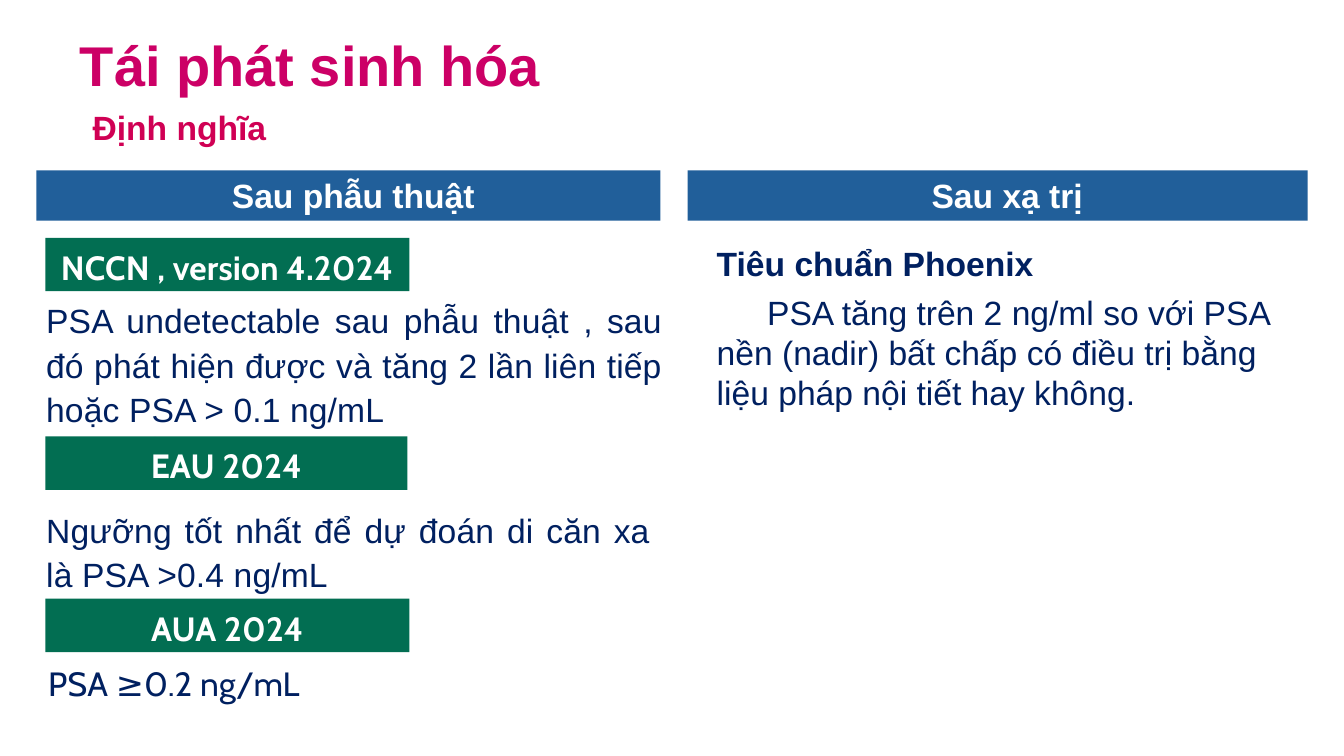
from dataclasses import dataclass

from pptx import Presentation
from pptx.dml.color import RGBColor
from pptx.enum.shapes import MSO_SHAPE
from pptx.enum.text import MSO_ANCHOR, MSO_AUTO_SIZE, PP_ALIGN
from pptx.util import Emu, Pt

RECTANGLE = MSO_SHAPE.RECTANGLE
TOP = MSO_ANCHOR.TOP
GROW = MSO_AUTO_SIZE.SHAPE_TO_FIT_TEXT
LEFT, CENTER, JUSTIFY = PP_ALIGN.LEFT, PP_ALIGN.CENTER, PP_ALIGN.JUSTIFY
EMU_PER_PX = 9144
TITLE_ONLY = 5


@dataclass(frozen=True)
class Theme:
    title: str = "CC0066"
    subtitle: str = "D00054"
    header: str = "215F9A"
    label: str = "026E52"
    body: str = "002060"
    white: str = "FFFFFF"
    title_size: int = 40
    text_size: int = 24
    font: str = "Arial"
    label_font: str = "Cabin"


def px(length):
    return Emu(length * EMU_PER_PX)


def write(paragraph, text, *, color, font, size, bold=False, align=LEFT,
          indent=0, line_spacing=1.0, space_before=0, tracking=0):
    paragraph.alignment = align
    paragraph.line_spacing = line_spacing
    paragraph.space_before = Pt(space_before)
    if indent:
        properties = paragraph._p.get_or_add_pPr()
        properties.set("marL", str(px(indent)))
        properties.set("indent", "0")
    run = paragraph.add_run()
    run.text = text
    run.font.name = font
    run.font.size = Pt(size)
    run.font.bold = bold
    run.font.color.rgb = RGBColor.from_string(color)
    if tracking:
        run._r.get_or_add_rPr().set("spc", str(tracking))


class SlideBuilder:
    def __init__(self, slide, theme):
        self.slide = slide
        self.theme = theme

    def frame(self, shape, margins=(10, 5)):
        frame = shape.text_frame
        frame.word_wrap = True
        frame.auto_size = GROW
        frame.vertical_anchor = TOP
        frame.margin_left = frame.margin_right = px(margins[0])
        frame.margin_top = frame.margin_bottom = px(margins[1])
        return frame

    def title(self, text, box):
        shape = self.slide.shapes.title
        shape.left, shape.top, shape.width, shape.height = map(px, box)
        frame = self.frame(shape, (7, 4))
        write(frame.paragraphs[0], text, color=self.theme.title, font=self.theme.font,
              size=self.theme.title_size, bold=True, align=CENTER)

    def text(self, text, box, **style):
        shape = self.slide.shapes.add_textbox(*map(px, box))
        self.fill_text(shape, [(text, style)])

    def fill_text(self, shape, items):
        frame = self.frame(shape)
        for index, (text, style) in enumerate(items):
            paragraph = frame.add_paragraph() if index else frame.paragraphs[0]
            settings = {"color": self.theme.body, "font": self.theme.font,
                        "size": self.theme.text_size, **style}
            write(paragraph, text, **settings)

    def bar(self, text, box, fill, **style):
        shape = self.slide.shapes.add_shape(RECTANGLE, *map(px, box))
        shape.shadow.inherit = False
        shape.fill.solid()
        shape.fill.fore_color.rgb = RGBColor.from_string(fill)
        shape.line.fill.background()
        settings = {"color": self.theme.white, "bold": True, "align": CENTER, **style}
        self.fill_text(shape, [(text, settings)])

    def header(self, text, box):
        self.bar(text, box, self.theme.header, indent=19)

    def label(self, text, top, width):
        self.bar(text, (45, top, width, 53), self.theme.label,
                 font=self.theme.label_font, line_spacing=1.1, tracking=10)

    def guideline(self, text, box, font):
        self.text(text, box, font=font, align=JUSTIFY, line_spacing=1.1, tracking=10)

    def criterion(self, heading, text, box):
        shape = self.slide.shapes.add_textbox(*map(px, box))
        self.fill_text(shape, [
            (heading, {"bold": True, "indent": 19}),
            (text, {"indent": 19, "space_before": 6}),
        ])


def main():
    presentation = Presentation()
    presentation.slide_width, presentation.slide_height = px(1333), px(750)
    slide = presentation.slides.add_slide(presentation.slide_layouts[TITLE_ONLY])
    theme = Theme()
    builder = SlideBuilder(slide, theme)

    builder.title("Tái phát sinh hóa", (24, 26, 567, 75))
    builder.text("Định nghĩa", (63, 101, 615, 50), color=theme.subtitle, bold=True, indent=19)
    builder.header("Sau phẫu thuật ", (36, 169, 619, 50))
    builder.header("Sau xạ trị", (682, 169, 615, 50))

    guidelines = [
        ("NCCN , version 4.2024", 236, 361,
         "PSA undetectable sau phẫu thuật , sau đó phát hiện được và tăng 2 lần "
         "liên tiếp hoặc PSA > 0.1 ng/mL", (36, 289, 631, 142), theme.font),
        ("EAU 2024", 433, 359,
         "Ngưỡng tốt nhất để dự đoán di căn xa là PSA >0.4 ng/mL",
         (36, 497, 619, 97), theme.font),
        ("AUA 2024", 594, 361, "PSA ≥0.2 ng/mL", (38, 649, 374, 53), theme.label_font),
    ]
    for name, top, width, definition, box, font in guidelines:
        builder.label(name, top, width)
        builder.guideline(definition, box, font)

    builder.criterion(
        "Tiêu chuẩn Phoenix",
        "\tPSA tăng trên 2 ng/ml so với PSA nền (nadir) bất chấp có điều trị "
        "bằng liệu pháp nội tiết hay không.",
        (682, 236, 615, 180))

    presentation.save("out.pptx")


if __name__ == "__main__":
    main()
